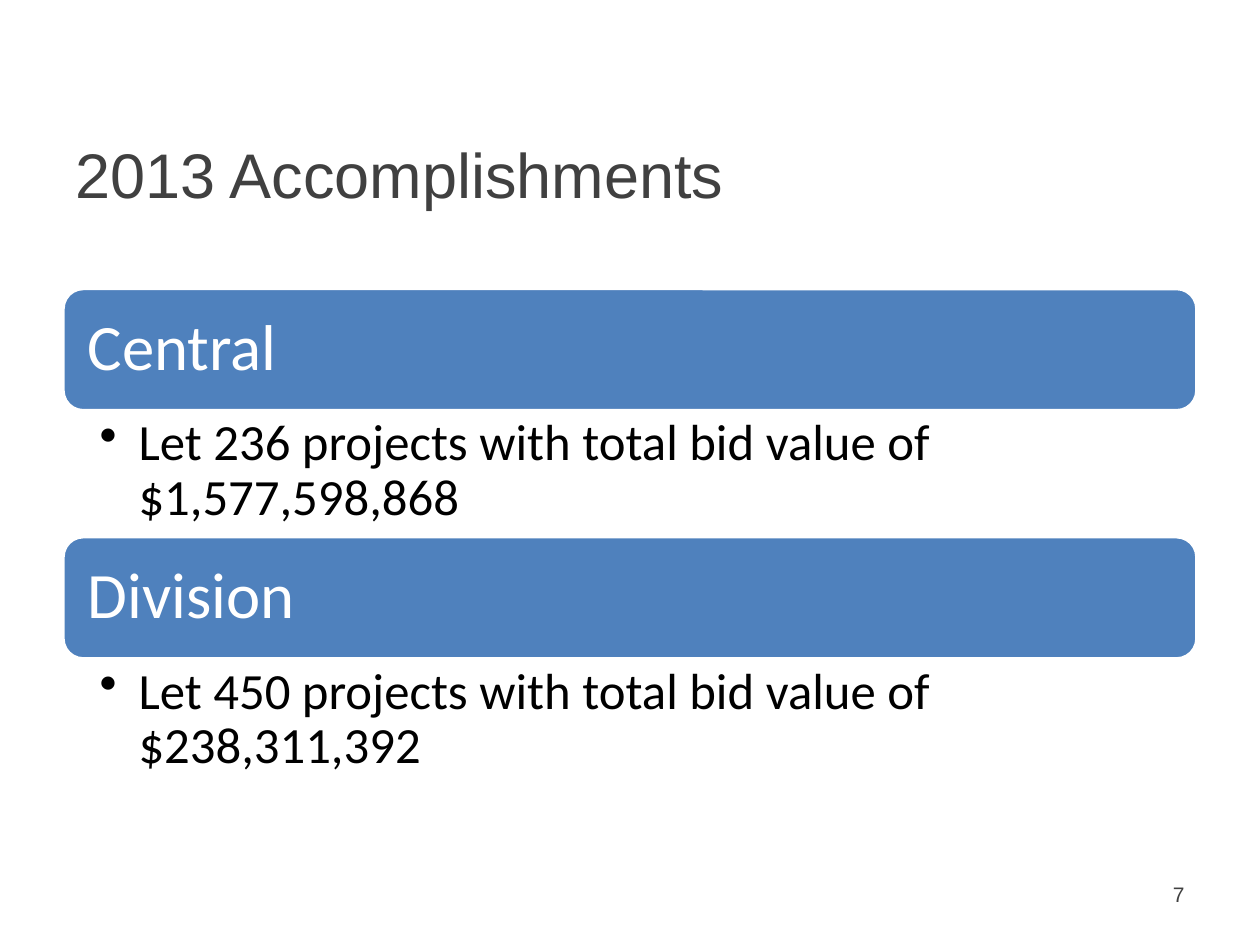
from lxml import etree
from pptx import Presentation
from pptx.dml.color import RGBColor
from pptx.enum.shapes import MSO_SHAPE
from pptx.enum.text import MSO_ANCHOR, PP_ALIGN
from pptx.oxml.ns import qn
from pptx.util import Inches, Pt

ROUNDED = MSO_SHAPE.ROUNDED_RECTANGLE
TOP, MIDDLE = MSO_ANCHOR.TOP, MSO_ANCHOR.MIDDLE
LEFT, RIGHT = PP_ALIGN.LEFT, PP_ALIGN.RIGHT

BLUE = RGBColor(0x4F, 0x81, 0xBD)
WHITE = RGBColor(0xFF, 0xFF, 0xFF)
BLACK = RGBColor(0x00, 0x00, 0x00)
GRAY = RGBColor(0x40, 0x40, 0x40)

TITLE = "2013 Accomplishments"
PAGE_NUMBER = "7"
SECTIONS = [
    ("Central", "Let 236 projects with total bid value of $1,577,598,868"),
    ("Division", "Let 450 projects with total bid value of $238,311,392"),
]

MARGIN, WIDTH = 0.5, 9
SECTIONS_TOP, SECTION_PITCH = 2.29, 1.97
HEADER_HEIGHT, DETAIL_HEIGHT = 0.97, 1.01
BULLET_INDENT = 0.31

TITLE_FONT = {"name": "Arial", "size": Pt(36)}
PAGE_FONT = {"name": "Arial", "size": Pt(12)}
HEADER_FONT = {"name": "Calibri", "size": Pt(37)}
DETAIL_FONT = {"name": "Calibri", "size": Pt(29)}


def write(shape, text, font, color, anchor=TOP, align=LEFT, inset_x=0.1, inset_y=0.05):
    frame = shape.text_frame
    frame.text = text
    frame_format = {
        "word_wrap": True,
        "vertical_anchor": anchor,
        "margin_left": Inches(inset_x),
        "margin_right": Inches(inset_x),
        "margin_top": Inches(inset_y),
        "margin_bottom": Inches(inset_y),
    }
    for name, value in frame_format.items():
        setattr(frame, name, value)
    paragraph = frame.paragraphs[0]
    paragraph.alignment = align
    run_font = paragraph.runs[0].font
    for name, value in font.items():
        setattr(run_font, name, value)
    run_font.color.rgb = color
    return paragraph


def add_bullet(paragraph):
    properties = paragraph._p.get_or_add_pPr()
    properties.set("marL", str(Inches(BULLET_INDENT)))
    properties.set("indent", str(-Inches(BULLET_INDENT)))
    etree.SubElement(properties, qn("a:buChar")).set("char", "•")


def add_section(slide, top, heading, detail):
    header = slide.shapes.add_shape(
        ROUNDED, Inches(MARGIN), Inches(top), Inches(WIDTH), Inches(HEADER_HEIGHT))
    header.shadow.inherit = False
    header.fill.solid()
    header.fill.fore_color.rgb = BLUE
    header.line.color.rgb = WHITE
    header.line.width = Pt(2)
    paragraph = write(header, heading, HEADER_FONT, WHITE, MIDDLE,
                      inset_x=0.15, inset_y=0.15)
    paragraph.line_spacing = 0.9

    body = slide.shapes.add_textbox(
        Inches(MARGIN), Inches(top + HEADER_HEIGHT), Inches(WIDTH), Inches(DETAIL_HEIGHT))
    paragraph = write(body, detail, DETAIL_FONT, BLACK, inset_x=0.29)
    paragraph.level = 1
    paragraph.line_spacing = 0.9
    add_bullet(paragraph)


def main():
    presentation = Presentation()
    presentation.slide_width, presentation.slide_height = Inches(10), Inches(7.5)
    slide = presentation.slides.add_slide(presentation.slide_layouts.get_by_name("Title Only"))

    title = slide.shapes.title
    title.left, title.top = Inches(MARGIN), Inches(0.75)
    title.width, title.height = Inches(WIDTH), Inches(1.25)
    write(title, TITLE, TITLE_FONT, GRAY, MIDDLE)

    for index, (heading, detail) in enumerate(SECTIONS):
        add_section(slide, SECTIONS_TOP + index * SECTION_PITCH, heading, detail)

    page = slide.shapes.add_textbox(Inches(8.9), Inches(6.95), Inches(0.6), Inches(0.4))
    write(page, PAGE_NUMBER, PAGE_FONT, GRAY, align=RIGHT)

    presentation.save("out.pptx")


if __name__ == "__main__":
    main()
